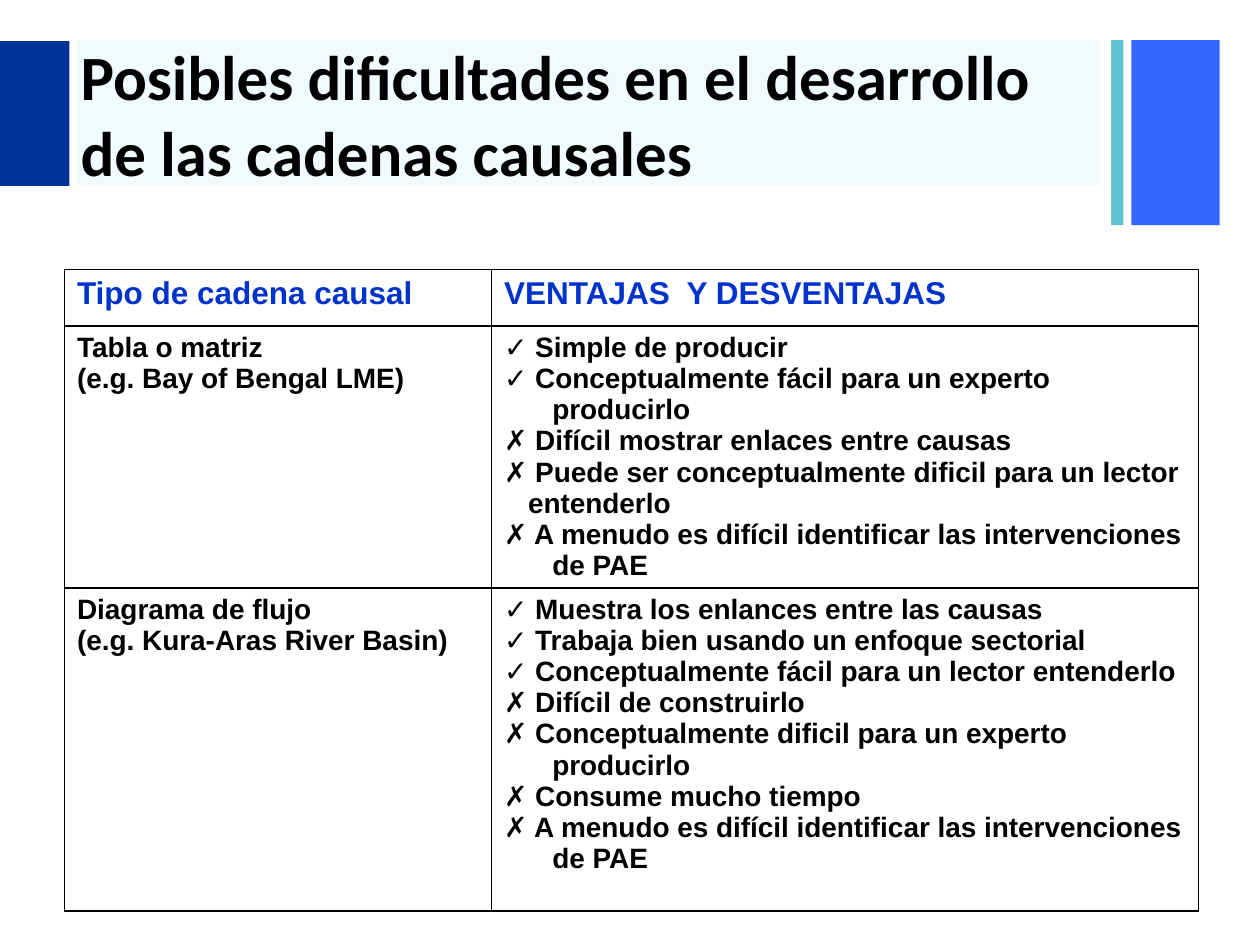
from lxml import etree
from pptx import Presentation
from pptx.dml.color import RGBColor
from pptx.enum.shapes import MSO_SHAPE
from pptx.enum.text import MSO_ANCHOR, PP_ALIGN
from pptx.oxml.ns import qn
from pptx.util import Cm, Pt

RECT = MSO_SHAPE.RECTANGLE
MIDDLE = MSO_ANCHOR.MIDDLE
LEFT = PP_ALIGN.LEFT


def color(text):
    return RGBColor.from_string(text)


def write(para, text, font, size, tint):
    run = para.add_run()
    run.text = text
    run.font.name = font
    run.font.size = Pt(size)
    run.font.bold = True
    run.font.color.rgb = color(tint)


deck = Presentation()
deck.slide_width, deck.slide_height = Cm(25.4), Cm(19.05)
slide = deck.slides.add_slide(deck.slide_layouts[5])

# Title
title = slide.shapes.title
title.left, title.top = Cm(1.37), Cm(0.86)
title.width, title.height = Cm(21), Cm(2.85)
frame = title.text_frame
frame.word_wrap = True
frame.vertical_anchor = MIDDLE
para = frame.paragraphs[0]
para.alignment = LEFT
write(para, "Posibles dificultades en el desarrollo de las cadenas causales",
      "Calibri", 36, "000000")

# Header bars, kept behind the title
bars = [
    (22.81, 0.81, 1.78, 3.73, "3366FF"),
    (22.4, 0.81, 0.25, 3.73, "65C4D2"),
    (1.55, 0.82, 20.62, 2.92, "EFFBFC"),
    (0, 0.83, 1.4, 2.92, "003399"),
]
for left, top, width, height, tint in bars:
    bar = slide.shapes.add_shape(RECT, Cm(left), Cm(top), Cm(width), Cm(height))
    bar.shadow.inherit = False
    bar.fill.solid()
    bar.fill.fore_color.rgb = color(tint)
    bar.line.fill.background()
    title._element.addprevious(bar._element)

# Table of chain types, one list of paragraphs per cell
rows = [
    (1.14, ["Tipo de cadena causal"], ["VENTAJAS  Y DESVENTAJAS"]),
    (5.28, ["Tabla o matriz", "(e.g. Bay of Bengal LME)"], [
        "✓ Simple de producir",
        "✓ Conceptualmente fácil para un experto producirlo",
        "✗ Difícil mostrar enlaces entre causas",
        "✗ Puede ser conceptualmente dificil para un lector entenderlo",
        "✗ A menudo es difícil identificar las intervenciones de PAE",
    ]),
    (6.52, ["Diagrama de flujo", "(e.g. Kura-Aras River Basin)"], [
        "✓ Muestra los enlances entre las causas",
        "✓ Trabaja bien usando un enfoque sectorial",
        "✓ Conceptualmente fácil para un lector entenderlo",
        "✗ Difícil de construirlo",
        "✗ Conceptualmente dificil para un experto producirlo",
        "✗ Consume mucho tiempo",
        "✗ A menudo es difícil identificar las intervenciones de PAE",
    ]),
]
total = sum(row[0] for row in rows)
table = slide.shapes.add_table(
    len(rows), 2, Cm(1.3), Cm(5.43), Cm(22.86), Cm(total)).table
table.columns[0].width, table.columns[1].width = Cm(8.61), Cm(14.25)

for r, (height, *cells) in enumerate(rows):
    table.rows[r].height = Cm(height)
    size, tint = (18, "0033CC") if r == 0 else (16, "000000")
    for c, lines in enumerate(cells):
        cell = table.cell(r, c)
        props = cell._tc.get_or_add_tcPr()
        # Thin black borders come before the fill
        for side in ("a:lnL", "a:lnR", "a:lnT", "a:lnB"):
            edge = etree.SubElement(props, qn(side), w=str(Pt(1)))
            fill = etree.SubElement(edge, qn("a:solidFill"))
            etree.SubElement(fill, qn("a:srgbClr"), val="000000")
        cell.fill.background()
        frame = cell.text_frame
        for i, text in enumerate(lines):
            para = frame.paragraphs[0] if i == 0 else frame.add_paragraph()
            # The one shorter hanging indent
            hang = Cm(0.48 if text.startswith("✗ Puede") else 0.97)
            para._p.get_or_add_pPr().set("marL", str(hang))
            para._p.get_or_add_pPr().set("indent", str(-hang))
            if r > 0:
                para.line_spacing = Pt(17.8)
            write(para, text, "Arial", size, tint)

deck.save("out.pptx")
